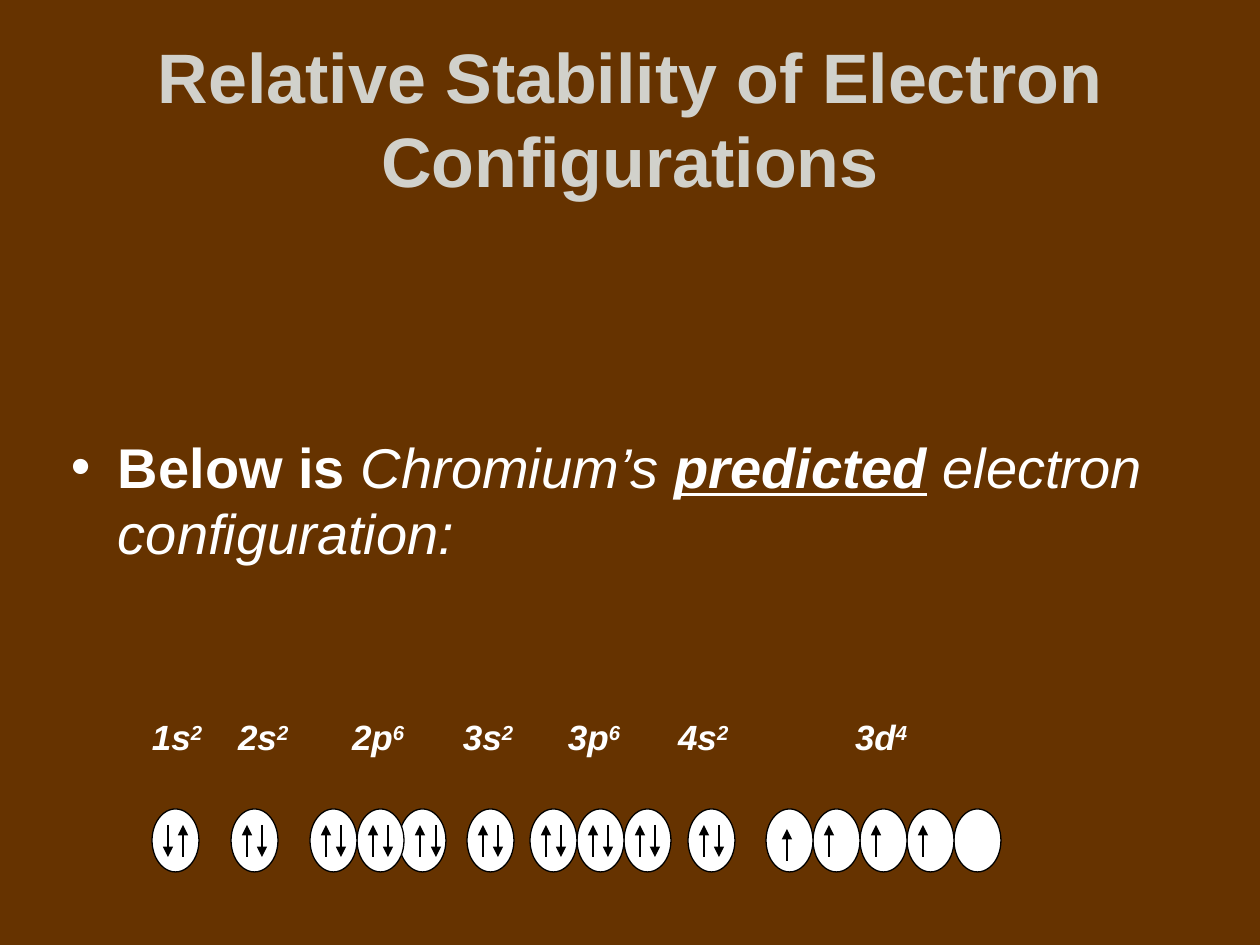
from lxml.etree import SubElement
from pptx import Presentation
from pptx.dml.color import RGBColor
from pptx.enum.shapes import MSO_CONNECTOR, MSO_SHAPE
from pptx.enum.text import MSO_ANCHOR, PP_ALIGN
from pptx.oxml.ns import qn
from pptx.util import Pt

PX = 914400 / 126
COLORS = {"background": "663300", "title": "D1D1CB", "text": "FFFFFF",
          "orbital": "FFFFFF", "ink": "000000"}
ORBITAL_W, ORBITAL_H, ORBITAL_STEP = 47, 63, 47
SINGLE = [("up", 16, 16)]
PAIR = SINGLE + [("down", 31, 16)]
SUBSHELLS = [
    ("1s", "2", 152, 152, [(0, [("down", 16, 16), ("up", 31, 16)])]),
    ("2s", "2", 238, 231, [(0, PAIR)]),
    ("2p", "6", 352, 310, [(0, PAIR), (47, PAIR), (89, [("up", 21, 16), ("down", 37, 16)])]),
    ("3s", "2", 463, 467, [(0, PAIR)]),
    ("3p", "6", 568, 530, [(i * ORBITAL_STEP, PAIR) for i in range(3)]),
    ("4s", "2", 678, 688, [(0, PAIR)]),
    ("3d", "4", 855, 766, [(0, [("up", 21, 20)])]
     + [(i * ORBITAL_STEP, SINGLE) for i in range(1, 4)] + [(4 * ORBITAL_STEP, [])]),
]


def px(*lengths):
    """Turn pixel lengths into EMU."""
    return [round(length * PX) for length in lengths]


def color(name):
    """Look up a named colour."""
    return RGBColor.from_string(COLORS[name])


def add_text_frame(slide, box, anchor=MSO_ANCHOR.TOP, wrap=True):
    """Add a text box without margins and return its frame."""
    frame = slide.shapes.add_textbox(*px(*box)).text_frame
    frame.margin_left = frame.margin_right = frame.margin_top = frame.margin_bottom = 0
    frame.word_wrap = wrap
    frame.vertical_anchor = anchor
    return frame


def add_run(paragraph, text, size, ink="text", bold=False, italic=False, underline=False):
    """Append one styled run."""
    run = paragraph.add_run()
    run.text = text
    font = run.font
    font.name, font.size = "Arial", Pt(size)
    font.bold, font.italic, font.underline = bold, italic, underline
    font.color.rgb = color(ink)
    return run


def add_title(slide, box):
    """Place the centred slide title."""
    paragraph = add_text_frame(slide, box, MSO_ANCHOR.MIDDLE).paragraphs[0]
    paragraph.alignment = PP_ALIGN.CENTER
    paragraph.line_spacing = Pt(48)
    add_run(paragraph, "Relative Stability of Electron Configurations", 40, "title", bold=True)


def add_statement(slide, box):
    """Place the bulleted statement with a hanging indent."""
    paragraph = add_text_frame(slide, box).paragraphs[0]
    paragraph.line_spacing = Pt(38)
    indent, = px(47)
    properties = paragraph._p.get_or_add_pPr()
    properties.set("marL", str(indent))
    properties.set("indent", str(-indent))
    SubElement(properties, qn("a:buFont"), typeface="Arial")
    SubElement(properties, qn("a:buChar"), char="•")
    add_run(paragraph, "Below is ", 32, bold=True)
    add_run(paragraph, "Chromium’s ", 32, italic=True)
    add_run(paragraph, "predicted", 32, bold=True, italic=True, underline=True)
    add_run(paragraph, " electron configuration:", 32, italic=True)


def add_label(slide, box, subshell, count):
    """Place a subshell name with its electron count raised."""
    paragraph = add_text_frame(slide, box, wrap=False).paragraphs[0]
    add_run(paragraph, subshell, 20, bold=True, italic=True)
    raised = add_run(paragraph, count, 20, bold=True, italic=True)
    raised.font._element.set("baseline", "30000")


def add_electron(slide, x, top, spin):
    """Draw one spin arrow."""
    start, end = (top + 32, top) if spin == "up" else (top, top + 32)
    arrow = slide.shapes.add_connector(MSO_CONNECTOR.STRAIGHT, *px(x, start, x, end))
    arrow.line.color.rgb = color("ink")
    arrow.line.width = Pt(0.75)
    SubElement(arrow.line._get_or_add_ln(), qn("a:tailEnd"), type="triangle")
    SubElement(arrow._element.spPr, qn("a:effectLst"))


def add_orbital(slide, left, top, electrons):
    """Draw one orbital with its electrons."""
    orbital = slide.shapes.add_shape(
        MSO_SHAPE.OVAL, *px(left, top, ORBITAL_W, ORBITAL_H))
    orbital.shadow.inherit = False
    orbital.fill.solid()
    orbital.fill.fore_color.rgb = color("orbital")
    orbital.line.color.rgb = color("ink")
    orbital.line.width = Pt(0.75)
    for spin, dx, dy in electrons:
        add_electron(slide, left + dx, top + dy, spin)


def add_configuration(slide, top):
    """Place the row of subshell labels above the row of orbitals."""
    for subshell, count, label_left, orbital_left, orbitals in SUBSHELLS:
        add_label(slide, (label_left, top, 56, 40), subshell, count)
        for offset, electrons in reversed(orbitals):
            add_orbital(slide, orbital_left + offset, top + 93, electrons)


def main():
    """Build the slide and save it."""
    presentation = Presentation()
    presentation.slide_width, presentation.slide_height = px(1260, 945)
    slide = presentation.slides.add_slide(presentation.slide_layouts[6])
    slide.background.fill.solid()
    slide.background.fill.fore_color.rgb = color("background")
    add_title(slide, (63, 27, 1134, 181))
    add_statement(slide, (71, 433, 1109, 134))
    add_configuration(slide, 716)
    presentation.save("out.pptx")


if __name__ == "__main__":
    main()
